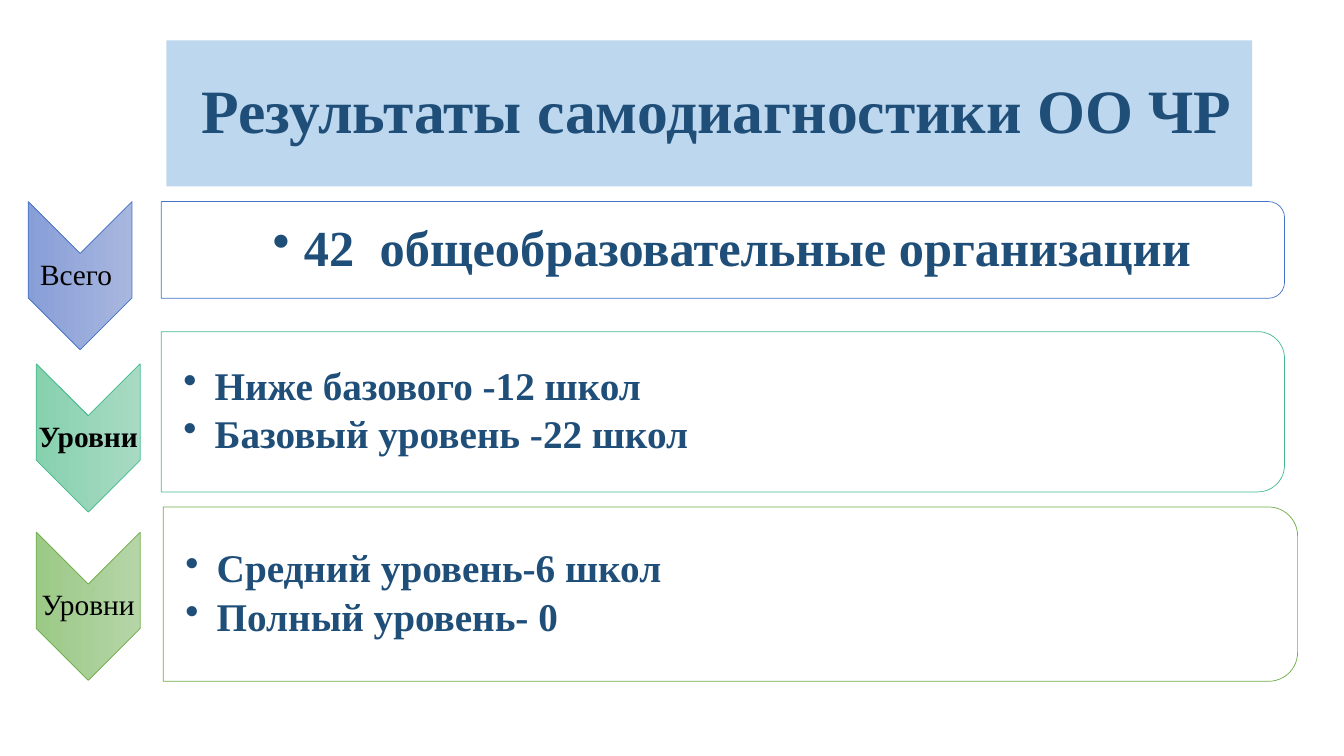
from lxml.etree import SubElement
from pptx import Presentation
from pptx.dml.color import RGBColor
from pptx.enum.shapes import MSO_SHAPE as Preset
from pptx.enum.text import MSO_ANCHOR as Anchor, PP_ALIGN as Align
from pptx.oxml.ns import qn
from pptx.util import Inches, Pt

NAVY = RGBColor(0x1F, 0x4E, 0x79)
SKY = RGBColor(0xBD, 0xD7, 0xEE)
BLACK = RGBColor(0x00, 0x00, 0x00)
WHITE = RGBColor(0xFF, 0xFF, 0xFF)
BLUE = RGBColor(0x44, 0x72, 0xC4)
BLUE_LIGHT = RGBColor(0xA8, 0xB7, 0xDF)
BLUE_DEEP = RGBColor(0x88, 0x9E, 0xD7)
MINT = RGBColor(0x43, 0xBB, 0x8D)
MINT_LIGHT = RGBColor(0xA8, 0xDA, 0xC3)
MINT_DEEP = RGBColor(0x87, 0xD1, 0xAF)
GREEN = RGBColor(0x70, 0xAD, 0x47)
GREEN_LIGHT = RGBColor(0xB5, 0xD5, 0xA7)
GREEN_DEEP = RGBColor(0x9C, 0xC9, 0x87)

CHEVRON_WIDTH, CHEVRON_HEIGHT = 1.03, 1.47
LABEL_HEIGHT = 0.44
BULLET_INDENT = Inches(0.31)


class SelfDiagnosisSlide:
    font_name = "Times New Roman"

    def __init__(self, slide):
        self.slide = slide

    def set_text(self, frame, lines, size, color, bold, align, insets, wrap=True):
        frame.word_wrap = wrap
        frame.vertical_anchor = Anchor.MIDDLE
        (frame.margin_left, frame.margin_top,
         frame.margin_right, frame.margin_bottom) = map(Inches, insets)
        frame.text = "\n".join(lines)
        for paragraph in frame.paragraphs:
            paragraph.alignment = align
            paragraph.line_spacing = 0.9
            for run in paragraph.runs:
                run.font.name = self.font_name
                run.font.size = Pt(size)
                run.font.bold = bold
                run.font.color.rgb = color

    def title(self, text):
        banner = self.slide.shapes.add_shape(
            Preset.RECTANGLE, Inches(1.65), Inches(0.4), Inches(10.77), Inches(1.45))
        banner.shadow.inherit = False
        banner.fill.solid()
        banner.fill.fore_color.rgb = SKY
        banner.line.fill.background()
        self.set_text(banner.text_frame, [text], 44, NAVY, True, Align.CENTER,
                      (0.25, 0.05, 0.1, 0.05))

    def turned_shape(self, preset, left, top, width, height, outline):
        shape = self.slide.shapes.add_shape(
            preset, Inches(left + (width - height) / 2), Inches(top + (height - width) / 2),
            Inches(height), Inches(width))
        shape.rotation = 90
        shape.shadow.inherit = False
        shape.line.color.rgb = outline
        shape.line.width = Pt(0.5)
        return shape

    def chevron(self, left, top, text, bold, right_inset, outline, light, deep):
        chevron = self.turned_shape(Preset.CHEVRON, left, top,
                                    CHEVRON_WIDTH, CHEVRON_HEIGHT, outline)
        chevron.fill.gradient()
        chevron.fill.gradient_angle = 270
        for stop, color in zip(chevron.fill.gradient_stops, (light, deep)):
            stop.color.rgb = color
        label = self.slide.shapes.add_textbox(
            Inches(left), Inches(top + (CHEVRON_HEIGHT - LABEL_HEIGHT) / 2),
            Inches(CHEVRON_WIDTH), Inches(LABEL_HEIGHT))
        self.set_text(label.text_frame, [text], 21, BLACK, bold, Align.CENTER,
                      (0.01, 0.01, right_inset, 0.01), wrap=False)

    def panel(self, left, top, width, height, lines, size, align, inset, outline):
        panel = self.turned_shape(Preset.ROUND_2_SAME_RECTANGLE, left, top,
                                  width, height, outline)
        panel.fill.solid()
        panel.fill.fore_color.rgb = WHITE
        white = panel.fill._xPr.find(qn("a:solidFill"))[0]
        SubElement(white, qn("a:alpha"), val="90000")
        findings = self.slide.shapes.add_textbox(
            Inches(left), Inches(top + height * 0.05),
            Inches(width - 0.08), Inches(height * 0.9))
        self.set_text(findings.text_frame, lines, size, NAVY, True, align,
                      (inset, 0.02, 0.02, 0.02))
        for paragraph in findings.text_frame.paragraphs:
            paragraph.level = 1
            paragraph.space_after = Pt(size * 0.15)
            properties = paragraph._p.get_or_add_pPr()
            properties.set("marL", str(BULLET_INDENT))
            properties.set("indent", str(-BULLET_INDENT))
            SubElement(properties, qn("a:buChar"), char="•")


def main():
    deck = Presentation()
    deck.slide_width, deck.slide_height = Inches(13.33), Inches(7.5)
    results = SelfDiagnosisSlide(deck.slides.add_slide(deck.slide_layouts[6]))
    results.title("Результаты самодиагностики ОО ЧР")

    results.chevron(0.28, 2, "Всего", False, 0.09, BLUE, BLUE_LIGHT, BLUE_DEEP)
    results.panel(1.6, 2, 11.14, 0.96, ["42  общеобразовательные организации"],
                  36, Align.CENTER, 0.28, BLUE)

    results.chevron(0.36, 3.61, "Уровни", True, 0.01, MINT, MINT_LIGHT, MINT_DEEP)
    results.panel(1.6, 3.29, 11.14, 1.59,
                  ["Ниже базового -12 школ", "Базовый уровень -22 школ"],
                  28, Align.LEFT, 0.22, MINT)

    results.chevron(0.36, 5.28, "Уровни", False, 0.01, GREEN, GREEN_LIGHT, GREEN_DEEP)
    results.panel(1.62, 5.03, 11.25, 1.73,
                  ["Средний уровень-6 школ", "Полный уровень- 0"],
                  28, Align.LEFT, 0.22, GREEN)
    deck.save("out.pptx")


if __name__ == "__main__":
    main()
